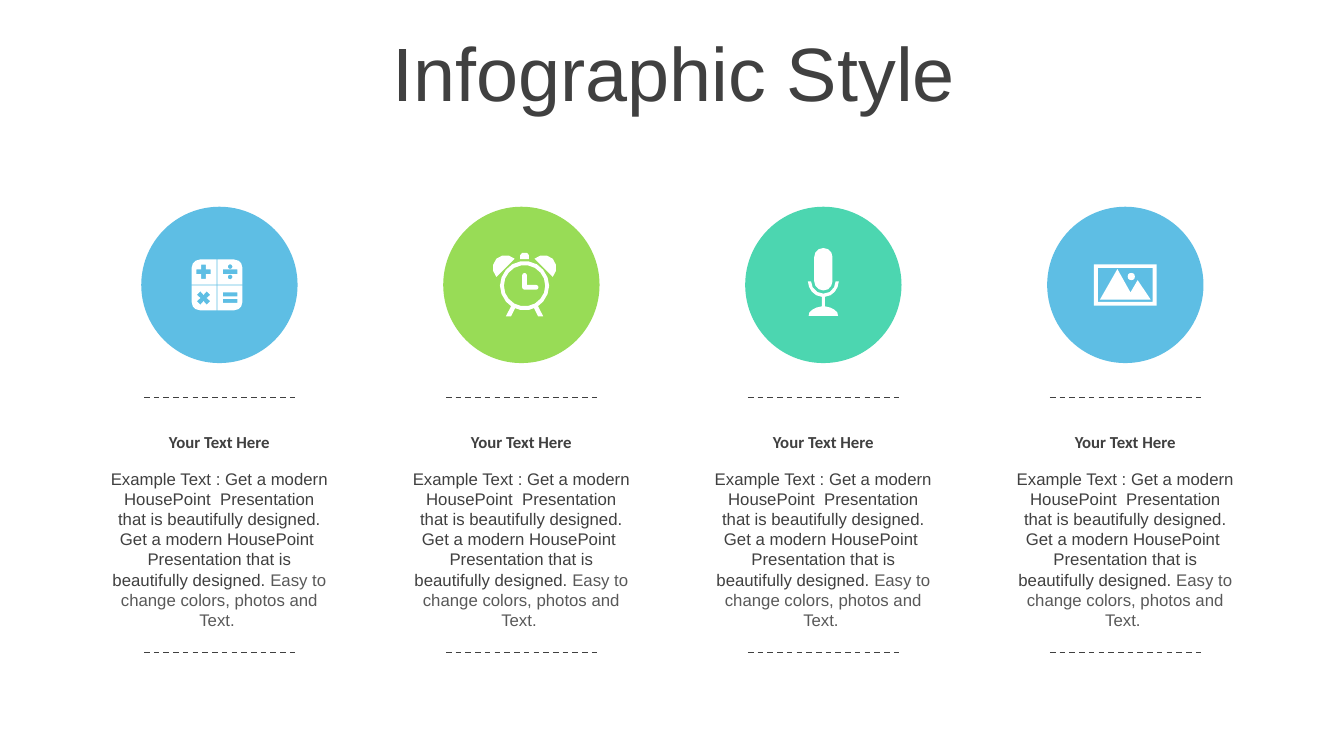
"""Builds a four-column infographic slide with icons in coloured circles."""
from dataclasses import dataclass
from math import cos, radians, sin

from lxml import etree
from pptx import Presentation
from pptx import util as u
from pptx.dml.color import RGBColor
from pptx.enum import dml, shapes, text
from pptx.oxml import ns


@dataclass(frozen=True)
class Theme:
    """Colours, fonts and type sizes."""
    ink: str = "404040"
    soft: str = "595959"
    white: str = "FFFFFF"
    blue: str = "5EBEE4"
    green: str = "98DC56"
    teal: str = "4CD6B0"
    font: str = "Arial"
    bold: str = "Calibri"
    large: int = 54
    small: int = 12


def arc(x, y, r, start, end, ry=None):
    """Points along an arc, in degrees clockwise from the right."""
    count = round(abs(end - start) / (30 if r < 35 else 20))
    turns = [radians(start + (end - start) * i / count) for i in range(count + 1)]
    return [(x + r * cos(t), y + (ry or r) * sin(t)) for t in turns]


def ring(x, y, r):
    """Points around a full circle."""
    return arc(x, y, r, 0, 360)[:-1]


def bar(x, y, w, h):
    """Corners of a rectangle, from its centre and half sizes."""
    return [(x - w, y - h), (x + w, y - h), (x + w, y + h), (x - w, y + h)]


def shift(points, dx, dy):
    """Points moved by an offset."""
    return [(x + dx, y + dy) for x, y in points]


def plus(x, y, turn=0):
    """Corners of a plus sign, turned by some degrees."""
    c, s = cos(radians(turn)), sin(radians(turn))
    arm = [(-6, -6), (-6, -18), (6, -18)]
    points = []
    for _ in range(4):
        points += arm
        arm = [(-b, a) for a, b in arm]
    return [(x + a * c - b * s, y + a * s + b * c) for a, b in points]


def calc():
    """Outlines of a calculator."""
    corner = [(1, 1), (64, 1), *arc(43, 43, 21, 0, 90), (1, 64)]
    keys = [[(a * i, b * j) for a, b in corner] for i in (-1, 1) for j in (-1, 1)]
    signs = [plus(-34, -33), plus(-34, 33, 45), bar(33, -33, 18, 6),
             bar(33, 24, 18, 5), bar(33, 40, 18, 5)]
    dots = [ring(33, y, 6) for y in (-46, -20)]
    return [shift(part, -6, 0) for part in keys + signs + dots]


def clock():
    """Outlines of an alarm clock."""
    rings = [ring(0, 0, r) for r in (62, 52)]
    hands = [*arc(0, -26, 6, 180, 360), (6, -2),
             *arc(29, 4, 6, -90, 90), *arc(0, 4, 6, 90, 180)]
    cap = [(-11, -67), (-11, -77), (-6, -83), (6, -83), (11, -77), (11, -67)]
    leg = [(47, 77), (34, 77), (24, 57), (34, 52)]
    bell = arc(48, -45, 32, -135, 45)
    pairs = [[(x * i, y) for x, y in part] for part in (leg, bell) for i in (-1, 1)]
    return [shift(part, 8, 2) for part in [*rings, hands, cap, *pairs]]


def mic():
    """Outlines of a microphone on its stand."""
    head = arc(0, -70, 23, 180, 360) + arc(0, -9, 23, 0, 180)
    stand = (arc(0, -9, 39, 0, 84) + arc(0, 78, 37, -84, 0, 24)
             + arc(0, 78, 37, 180, 264, 24) + arc(0, -9, 39, 96, 180)
             + arc(0, -9, 31, 180, 0))
    return [head, stand]


def photo():
    """Outlines of a framed landscape."""
    hills = [(-64, 37), (-20, -40), (13, 19), (31, -12), (64, 37)]
    return [bar(0, 0, 79, 52), bar(0, 0, 69, 43), hills, ring(15, -21, 9)]


class Deck:
    """Holds the theme and the current slide."""

    def __init__(self, theme):
        """Open a deck with one blank slide."""
        self.theme = theme
        self.file = Presentation()
        self.file.slide_width, self.file.slide_height = u.Cm(33.87), u.Cm(19.05)
        self.slide = self.file.slides.add_slide(self.file.slide_layouts[6])
        self.items = self.slide.shapes

    def paint(self, shape, color):
        """Give a shape a plain fill."""
        shape.shadow.inherit = False
        shape.fill.solid()
        shape.fill.fore_color.rgb = RGBColor.from_string(color)
        shape.line.fill.background()

    def disc(self, x, y, size, color):
        """Draw a circle around a centre."""
        box = [u.Cm(n) for n in (x - size / 2, y - size / 2, size, size)]
        self.paint(self.items.add_shape(shapes.MSO_SHAPE.OVAL, *box), color)

    def icon(self, x, y, parts):
        """Draw outlines, in tenths of a millimetre, around a centre."""
        pen = self.items.build_freeform(*parts[0][0], scale=u.Cm(0.01))
        for i, part in enumerate(parts):
            if i:
                pen.move_to(*part[0])
            pen.add_line_segments(part[1:], close=True)
        self.paint(pen.convert_to_shape(u.Cm(x), u.Cm(y)), self.theme.white)

    def rule(self, x, y, half):
        """Draw a dashed level line around a centre."""
        line = self.items.add_connector(
            shapes.MSO_CONNECTOR.STRAIGHT,
            u.Cm(x - half), u.Cm(y), u.Cm(x + half), u.Cm(y))
        line.line.color.rgb = RGBColor.from_string(self.theme.ink)
        line.line.width = u.Pt(1)
        line.line.dash_style = dml.MSO_LINE.DASH
        etree.SubElement(line._element.spPr, ns.qn("a:effectLst"))

    def text(self, box, *runs, size=None, font=None, bold=False, middle=False,
             lead=None):
        """Write centred runs, each a pair of words and colour."""
        frame = self.items.add_textbox(*[u.Cm(n) for n in box]).text_frame
        frame.word_wrap = True
        if middle:
            frame.vertical_anchor = text.MSO_ANCHOR.MIDDLE
        para = frame.paragraphs[0]
        para.alignment = text.PP_ALIGN.CENTER
        para.line_spacing = lead
        for words, color in runs:
            run = para.add_run()
            run.text = words
            run.font.size = u.Pt(size or self.theme.small)
            run.font.name = font or self.theme.font
            run.font.bold = bold
            run.font.color.rgb = RGBColor.from_string(color)


def main():
    """Build and save the slide."""
    look = Theme()
    deck = Deck(look)
    deck.text((0.9, 0.94, 32.16, 2.01), ("Infographic Style", look.ink),
              size=look.large, middle=True, lead=0.9)
    pitch = "Get a modern HousePoint  Presentation that is beautifully designed. "
    body = ("Example Text : " + pitch * 2, look.ink)
    tail = ("Easy to change colors, photos and Text. ", look.soft)
    columns = [(look.blue, calc), (look.green, clock),
               (look.teal, mic), (look.blue, photo)]
    for i, (color, draw) in enumerate(columns):
        x, y = 5.53 + 7.61 * i, 7.18
        deck.disc(x, y, 3.94, color)
        deck.icon(x, y, draw())
        deck.text((x - 3.02, 10.76, 6.04, 0.76), ("Your Text Here", look.ink),
                  font=look.bold, bold=True)
        deck.text((x - 3.02, 11.68, 6.04, 4.37), body, tail)
        for level in (10.02, 16.44):
            deck.rule(x, level, 1.9)
    deck.file.save("out.pptx")


if __name__ == "__main__":
    main()
